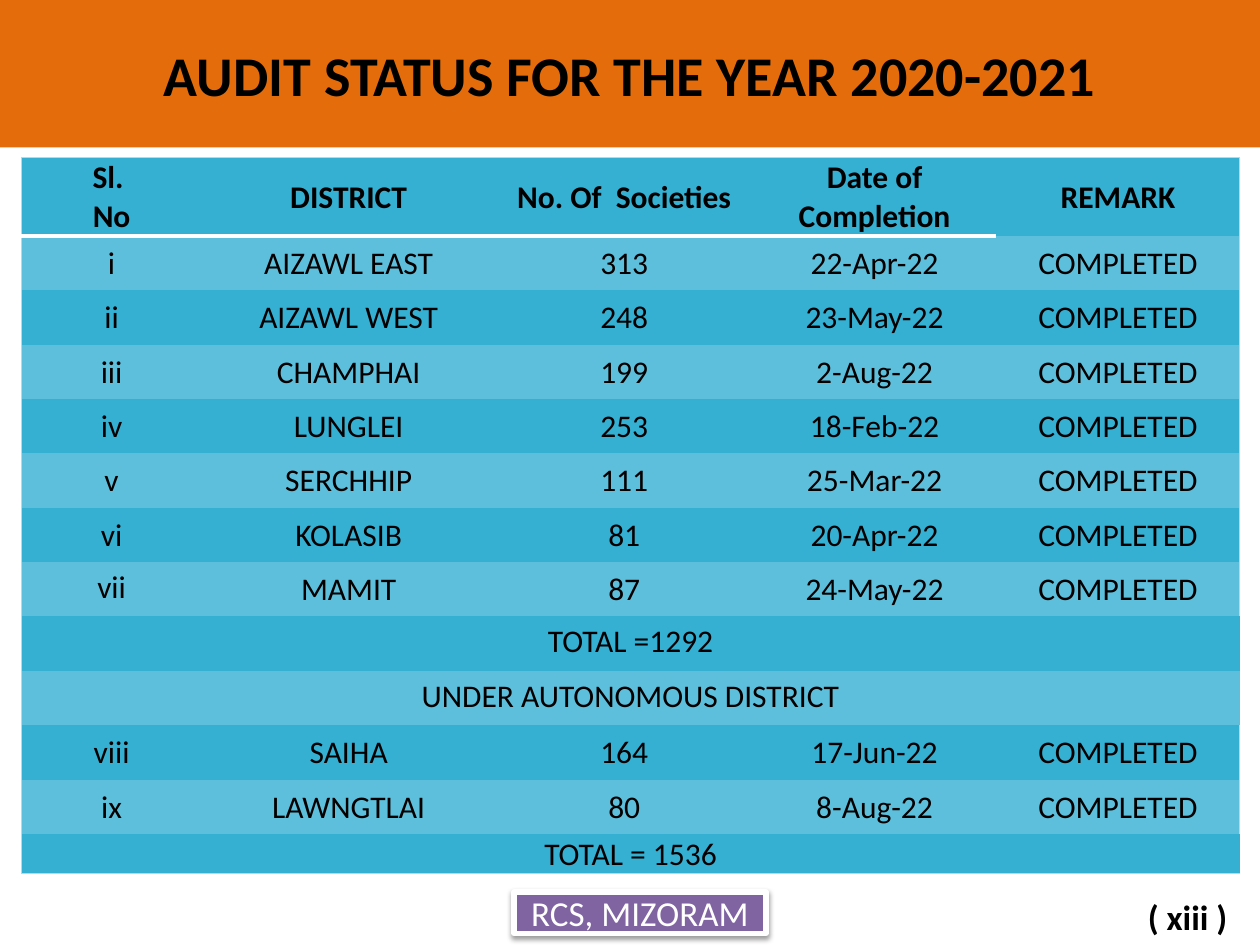
from lxml import etree
from pptx import Presentation
from pptx.dml.color import RGBColor
from pptx.enum.shapes import MSO_SHAPE
from pptx.enum.text import MSO_ANCHOR, PP_ALIGN
from pptx.oxml import parse_xml
from pptx.util import Inches, Pt

RECT = MSO_SHAPE.RECTANGLE
MIDDLE, TOP = MSO_ANCHOR.MIDDLE, MSO_ANCHOR.TOP
CENTER, RIGHT = PP_ALIGN.CENTER, PP_ALIGN.RIGHT
NS = "http://schemas.openxmlformats.org/drawingml/2006/main"
PLAIN = "{2D5ABB26-0587-4C30-8999-92F81FD0307C}"  # no style, no grid

BLACK, WHITE = "000000", "FFFFFF"
ORANGE, PURPLE = "E46C0A", "8064A2"
DARK, LIGHT, EDGE = "35AFD2", "5DBFDB", "BCD7E1"
WIDTHS = [1.43, 2.33, 2.04, 1.93, 1.93]
HEIGHTS = [0.62] + [0.43] * 11 + [0.31]

HEAD = ["Sl. \vNo", "DISTRICT", "No. Of  Societies", "Date of Completion", "REMARK"]
DONE = "COMPLETED"
ROWS = [
    HEAD,
    ["i", "AIZAWL EAST", "313", "22-Apr-22", DONE],
    ["ii", "AIZAWL WEST", "248", "23-May-22", DONE],
    ["iii", "CHAMPHAI", "199", "2-Aug-22", DONE],
    ["iv", "LUNGLEI", "253", "18-Feb-22", DONE],
    ["v", "SERCHHIP", "111", "25-Mar-22", DONE],
    ["vi", "KOLASIB", "81", "20-Apr-22", DONE],
    ["vii", "MAMIT", "87", "24-May-22", DONE],
    ["TOTAL =1292"],
    ["UNDER AUTONOMOUS DISTRICT"],
    ["viii", "SAIHA", "164", "17-Jun-22", DONE],
    ["ix", "LAWNGTLAI", "80", "8-Aug-22", DONE],
    ["TOTAL = 1536"],
]
TOP_SET = {(7, 0), (8, 0), (9, 0)}  # cells whose text hangs from the top


def color(code):
    return RGBColor.from_string(code)


def write(frame, text, size, code=BLACK, bold=False, align=CENTER):
    frame.text = text
    for para in frame.paragraphs:
        para.alignment = align
        for run in para.runs:
            font = run.font
            font.name, font.size, font.bold = "Calibri", Pt(size), bold
            font.color.rgb = color(code)


def add_rect(slide, box, fill):
    shape = slide.shapes.add_shape(RECT, *map(Inches, box))
    shape.shadow.inherit = False
    shape.fill.solid()
    shape.fill.fore_color.rgb = color(fill)
    shape.line.fill.background()
    shape.text_frame.word_wrap = True
    shape.text_frame.vertical_anchor = MIDDLE
    return shape


def add_title(slide, box):
    bar = add_rect(slide, box, ORANGE)
    write(bar.text_frame, "AUDIT STATUS FOR THE YEAR 2020-2021", 32, bold=True)


def set_edges(cell, edges):
    """Draw the given sides; edges maps L, R, T, B to colour and points."""
    props = cell._tc.get_or_add_tcPr()
    sides = [side for side in "LRTB" if side in edges]
    for spot, side in enumerate(sides):
        code, width = edges[side]
        props.insert(spot, parse_xml(
            f'<a:ln{side} xmlns:a="{NS}" w="{Pt(width)}"><a:solidFill>'
            f'<a:srgbClr val="{code}"/></a:solidFill></a:ln{side}>'))


def find_edges(row, col, last):
    thin = (EDGE, 0.75)
    edges = {}
    if col == 0:
        edges["L"] = thin
    if col == last:
        edges["R"] = thin
    if row == 0:
        edges["T"] = thin
        if col < last:
            edges["B"] = (WHITE, 3)
    if row == len(ROWS) - 1:
        edges["B"] = thin
    return edges


def add_audit(slide, box):
    frame = slide.shapes.add_table(len(ROWS), len(WIDTHS), *map(Inches, box))
    table = frame.table
    table._tbl.tblPr[0].text = PLAIN
    for col, width in zip(table.columns, WIDTHS):
        col.width = Inches(box[2] * width / sum(WIDTHS))
    for line, height in zip(table.rows, HEIGHTS):
        line.height = Inches(box[3] * height / sum(HEIGHTS))
    last = len(WIDTHS) - 1
    for row, words in enumerate(ROWS):
        if len(words) == 1:
            table.cell(row, 0).merge(table.cell(row, last))
        for col in range(last + 1):
            cell = table.cell(row, col)
            cell.fill.solid()
            cell.fill.fore_color.rgb = color(LIGHT if row % 2 else DARK)
            set_edges(cell, find_edges(row, col, last))
            if col >= len(words):
                continue
            write(cell.text_frame, words[col], 18, bold=row == 0)
            if (row, col) in TOP_SET:
                cell.vertical_anchor = TOP
            else:
                cell.vertical_anchor = MIDDLE
                cell.margin_left = cell.margin_right = cell.margin_top = Inches(0.01)
                cell.margin_bottom = 0


def add_badge(slide, box):
    badge = add_rect(slide, box, PURPLE)
    badge.line.color.rgb = color(WHITE)
    badge.line.width = Pt(3)
    write(badge.text_frame, "RCS, MIZORAM", 20, WHITE)
    list_ = badge._element.spPr.find(f"{{{NS}}}effectLst")
    shade = etree.SubElement(list_, f"{{{NS}}}outerShdw", blurRad=str(Pt(3.1)),
                             dist=str(Pt(1.6)), dir="5400000", rotWithShape="0")
    tint = etree.SubElement(shade, f"{{{NS}}}srgbClr", val=BLACK)
    etree.SubElement(tint, f"{{{NS}}}alpha", val="38000")


def add_number(slide, box):
    frame = slide.shapes.add_textbox(*map(Inches, box)).text_frame
    frame.word_wrap = True
    write(frame, "( xiii )", 20, bold=True, align=RIGHT)


def main():
    deck = Presentation()
    deck.slide_width, deck.slide_height = Inches(10), Inches(7.5)
    slide = deck.slides.add_slide(deck.slide_layouts[6])
    add_title(slide, (0, 0, 10, 1.17))
    add_audit(slide, (0.17, 1.25, 9.67, 5.68))
    add_badge(slide, (4.08, 7.08, 2, 0.33))
    add_number(slide, (8.67, 7.06, 1.17, 0.44))
    deck.save("out.pptx")


if __name__ == "__main__":
    main()
